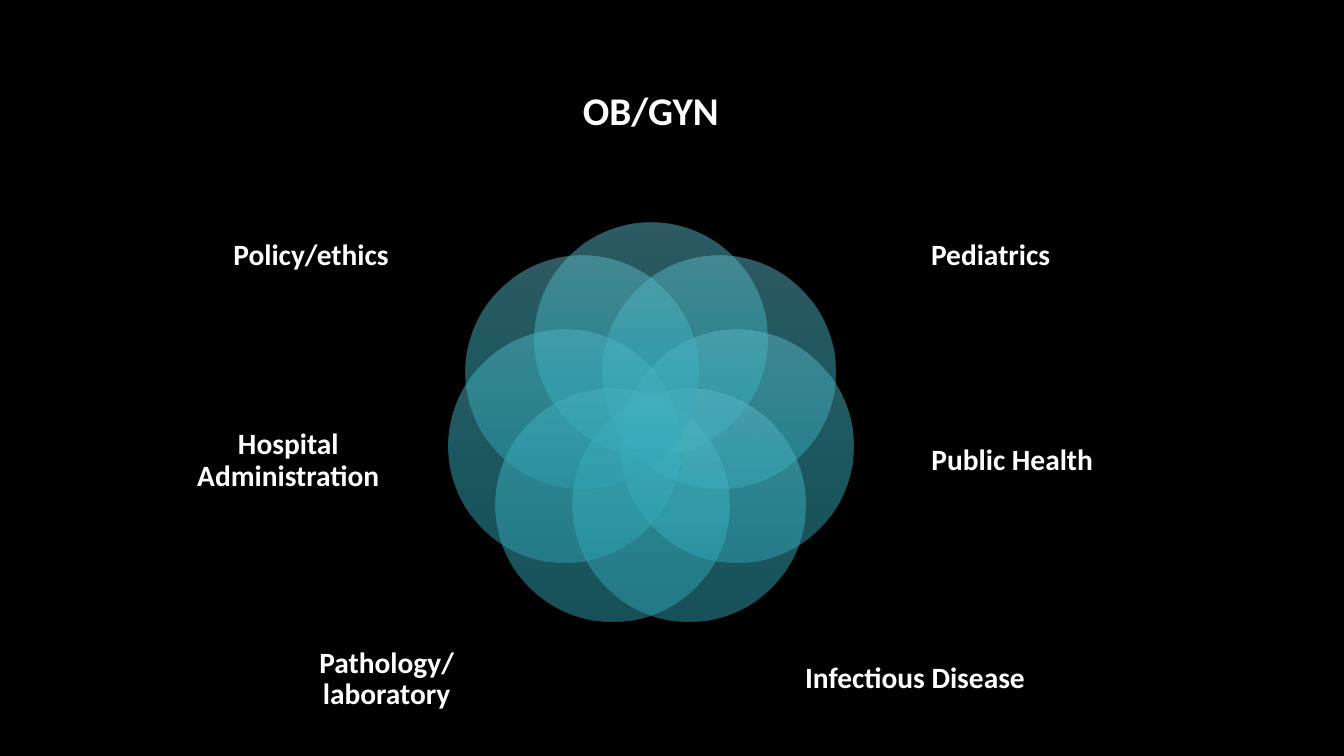
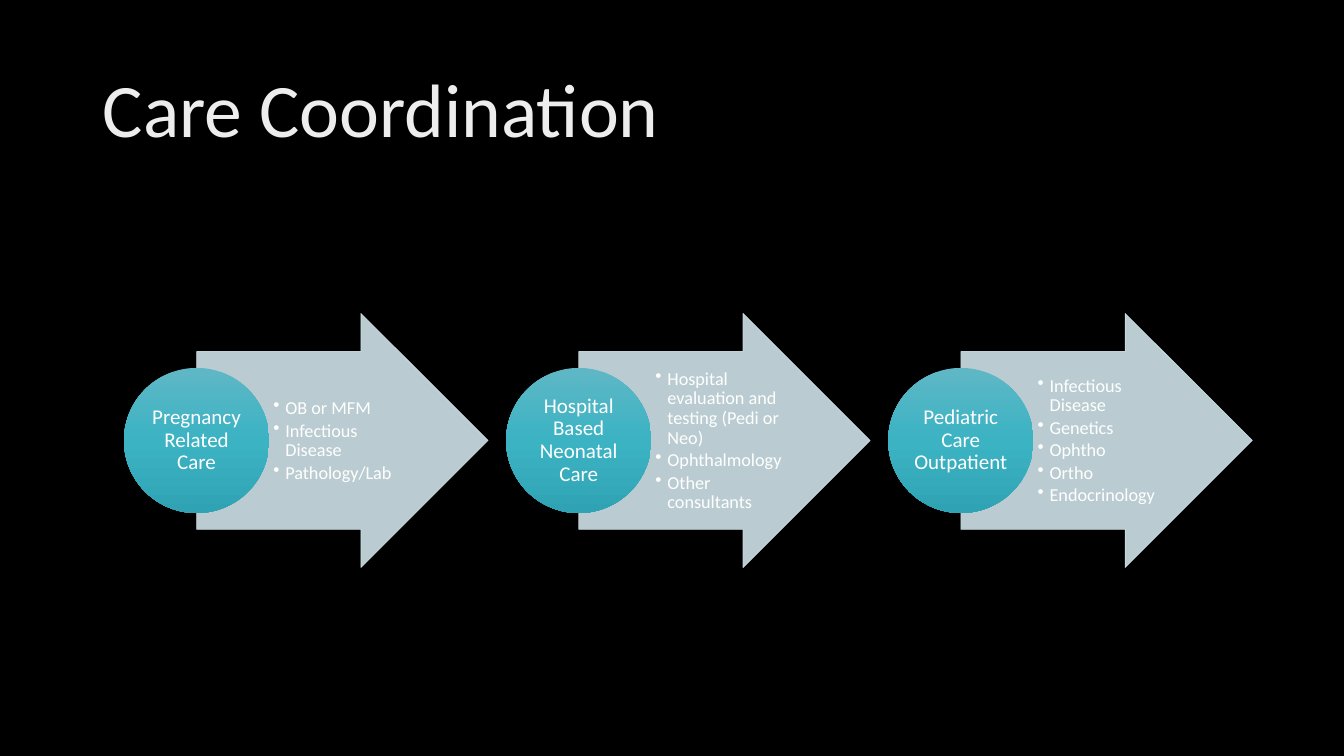
from dataclasses import dataclass
from math import cos, pi, sin

from lxml.etree import SubElement
from pptx import Presentation
from pptx.dml.color import RGBColor
from pptx.enum.shapes import MSO_SHAPE
from pptx.enum.text import MSO_ANCHOR, MSO_AUTO_SIZE, PP_ALIGN
from pptx.oxml.ns import qn
from pptx.util import Pt

PX = 9144  # 100 px to the inch


@dataclass(frozen=True)
class Theme:
    font: str = "Calibri"
    back: str = "000000"
    text: str = "FFFFFF"
    arrow: str = "CFE3E8"
    disc: tuple = ((0, "5FB7C5"), (50, "3BB3C3"), (100, "2FA3B3"))
    title: tuple = ((0, "BFBFBF"), (28, "EDEDED"), (100, "FFFFFF"))
    head: int = 54
    lead: int = 28
    label: int = 21
    step: int = 15
    item: int = 13


theme = Theme()


def blend(fill, holder, stops, angle, alpha=100):
    """Give fill, whose XML sits in holder, a gradient of (percent, colour) stops."""
    fill.gradient()
    fill.gradient_angle = 360 - angle
    stop_list = holder.find(qn("a:gradFill")).find(qn("a:gsLst"))
    for old in list(stop_list):
        stop_list.remove(old)
    for place, tone in stops:
        stop = SubElement(stop_list, qn("a:gs"), pos=str(place * 1000))
        color = SubElement(stop, qn("a:srgbClr"), val=tone)
        if alpha < 100:
            SubElement(color, qn("a:alpha"), val=str(alpha * 1000))


def draw(slide, kind, box, lines=(), size=0, bold=False, bullet=False, inset=(0, 0, 0, 0)):
    """Add a shape without outline, or a text box if kind is None."""
    place = [n * PX for n in box]
    if kind is None:
        shape = slide.shapes.add_textbox(*place)
    else:
        shape = slide.shapes.add_shape(kind, *place)
        shape.shadow.inherit = False
        shape.line.fill.background()
    frame = shape.text_frame
    frame.word_wrap = True
    frame.vertical_anchor = MSO_ANCHOR.MIDDLE
    (frame.margin_left, frame.margin_top,
     frame.margin_right, frame.margin_bottom) = [n * PX for n in inset]
    for i, line in enumerate(lines):
        para = frame.add_paragraph() if i else frame.paragraphs[0]
        para.text = line
        if bullet:
            props = para._p.get_or_add_pPr()
            props.set("marL", str(12 * PX))
            props.set("indent", str(-12 * PX))
            SubElement(props, qn("a:buChar"), char="•")
            para.space_after = Pt(2)
        para.alignment = PP_ALIGN.LEFT if bullet else PP_ALIGN.CENTER
        para.line_spacing = 0.9
        para.font.name = theme.font
        para.font.size = Pt(size)
        para.font.bold = bold
        para.font.color.rgb = RGBColor.from_string(theme.text)
    return shape


deck = Presentation()
deck.slide_width, deck.slide_height = 1333 * PX, 750 * PX
back = deck.slide_master.background.fill
back.solid()
back.fore_color.rgb = RGBColor.from_string(theme.back)

# Slide 1: ring of specialties
ring = deck.slides.add_slide(deck.slide_layouts[6])
mid_x, mid_y, reach, wide = 645, 423, 87, 231

# Text, offset from the middle, top, width, height
labels = [
    ("OB/GYN", 0, 41, 265, 142),
    ("Pediatrics", 337, 176, 251, 156),
    ("Public Health", 359, 374, 246, 167),
    ("Infectious Disease", 262, 598, 265, 152),
    ("Pathology/ laboratory", -262, 598, 265, 152),
    ("Hospital Administration", -359, 374, 246, 167),
    ("Policy/ethics", -337, 176, 251, 156),
]
for i, (text, shift, top, width, height) in enumerate(labels):
    turn = 2 * pi * i / len(labels)
    left = round(mid_x + reach * sin(turn)) - wide // 2
    upper = round(mid_y - reach * cos(turn)) - wide // 2
    disc = draw(ring, MSO_SHAPE.OVAL, (left, upper, wide, wide))
    blend(disc.fill, disc._element.spPr, theme.disc, 90, 50)
    draw(ring, None, (mid_x + shift - width // 2, top, width, height), [text],
         theme.label if i else theme.lead, bold=True)

# Slide 2: three steps of care
care = deck.slides.add_slide(deck.slide_layouts[5])
title = care.shapes.title
title.left, title.top, title.width, title.height = [n * PX for n in (92, 40, 1150, 145)]
frame = title.text_frame
frame.text = "Care Coordination"
frame.word_wrap = True
frame.auto_size = MSO_AUTO_SIZE.NONE
frame.vertical_anchor = MSO_ANCHOR.MIDDLE
para = frame.paragraphs[0]
para.alignment = PP_ALIGN.LEFT
para.line_spacing = 0.9
run = para.runs[0]
run.font.name = theme.font
run.font.size = Pt(theme.head)
blend(run.font.fill, run._r.rPr, theme.title, 80)

steps = [
    ("Pregnancy Related Care", ["OB or MFM", "Infectious Disease", "Pathology/Lab"]),
    ("Hospital Based Neonatal Care",
     ["Hospital evaluation and testing (Pedi or Neo)", "Ophthalmology", "Other consultants"]),
    ("Pediatric Care Outpatient",
     ["Infectious Disease", "Genetics", "Ophtho", "Ortho", "Endocrinology"]),
]
for i, (name, items) in enumerate(steps):
    left = 123 + 379 * i
    arrow = draw(care, MSO_SHAPE.RIGHT_ARROW, (left + 72, 311, 289, 252))
    arrow.adjustments[0], arrow.adjustments[1] = 0.7, 0.5
    arrow.line.width = Pt(0.5)
    for fill in (arrow.fill, arrow.line.fill):
        fill.solid()
        fill.fore_color.rgb = RGBColor.from_string(theme.arrow)
    for color in arrow._element.spPr.iter(qn("a:srgbClr")):
        SubElement(color, qn("a:alpha"), val="90000")
    draw(care, None, (left + 144, 349, 141, 177), items, theme.item,
         bullet=True, inset=(4, 1, 2, 1))
    disc = draw(care, MSO_SHAPE.OVAL, (left, 365, 144, 144), [name], theme.step,
                inset=(1, 1, 1, 1))
    blend(disc.fill, disc._element.spPr, theme.disc, 90)

deck.save("out.pptx")
